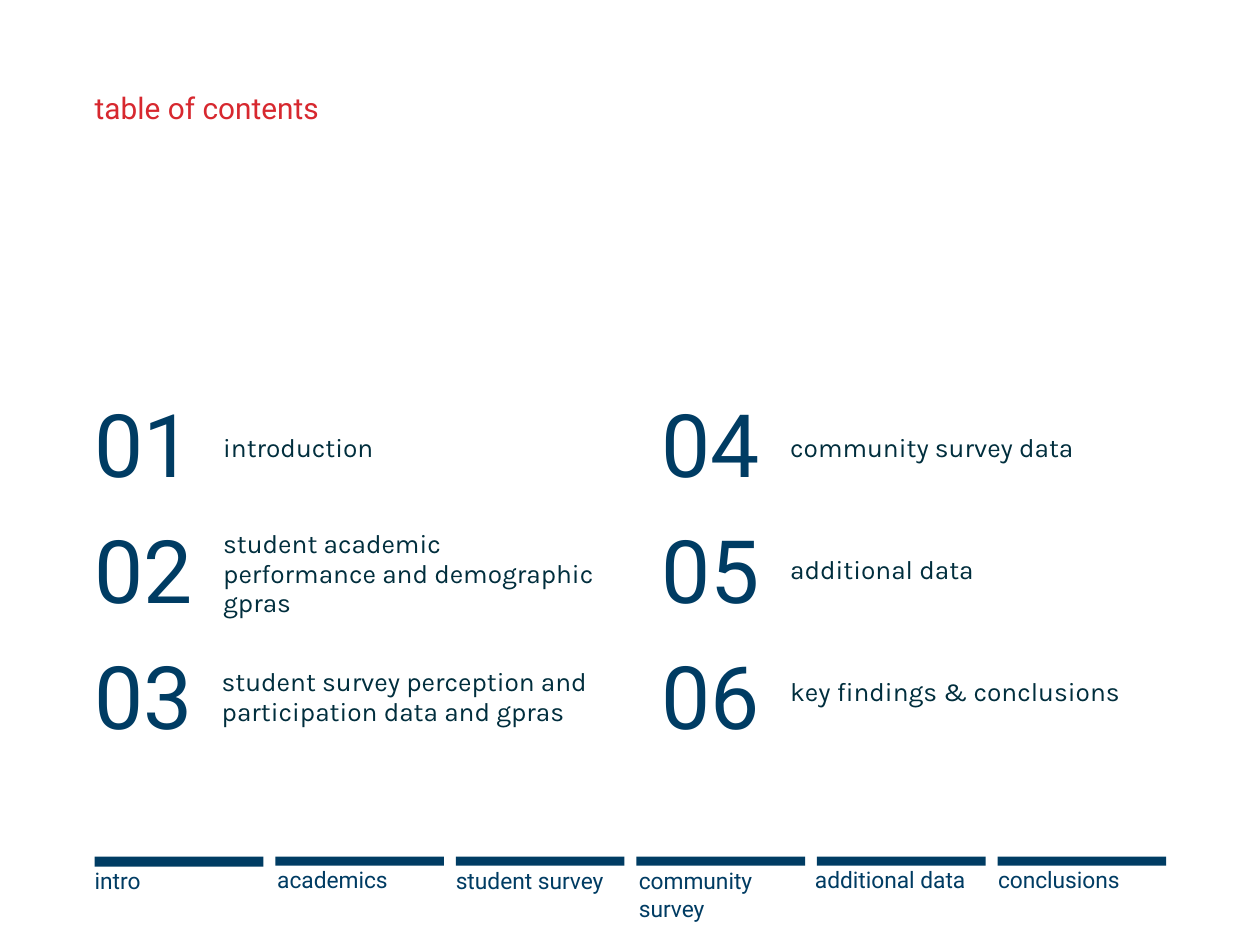
from dataclasses import dataclass

import pptx
import pptx.dml.color
import pptx.enum.shapes
import pptx.enum.text
import pptx.util

Cm = pptx.util.Cm
Pt = pptx.util.Pt
ANCHOR = pptx.enum.text.MSO_ANCHOR

COLORS = {"navy": "003C63", "ink": "002E3D", "red": "D7282F"}

STYLES = {
    "title": {"name": "Roboto", "size": Pt(17), "color": "red", "spacing": 0.85},
    "number": {"name": "Roboto", "size": Pt(50), "color": "navy", "spacing": 0.85},
    "entry": {"name": "Karla", "size": Pt(15), "color": "ink", "spacing": Pt(17)},
    "tab": {"name": "Roboto", "size": Pt(13), "color": "navy", "spacing": 1.0},
}

MARGIN = 1.91
ROWS = 3
ROW_STEP = 2.54
COLUMN_STEP = 11.43
NUMBER_TOP = 8.18
TAB_STEP = 3.64
TAB_WIDTH = 3.4
BAR_TOP = 17.27


@dataclass
class Entry:
    text: str
    left: float
    top: float
    width: float = 7.57


@dataclass
class Tab:
    text: str
    left: float
    top: float
    bar_height: float = 0.18


ENTRIES = [
    Entry("introduction", 4.5, 7.75),
    Entry("student academic performance and demographic gpras", 4.5, 10.29),
    Entry("student survey perception and participation data and gpras", 4.47, 12.78),
    Entry("community survey data", 15.93, 7.75, 7.98),
    Entry("additional data", 15.93, 10.21),
    Entry("key findings & conclusions", 15.93, 12.67),
]

TABS = [
    Tab("intro", 1.91, 17.48, 0.2),
    Tab("academics", 5.59, 17.45),
    Tab("student survey", 9.19, 17.48),
    Tab("community survey", 12.88, 17.48),
    Tab("additional data", 16.43, 17.45),
    Tab("conclusions", 20.12, 17.45),
]


def rgb(name: str) -> pptx.dml.color.RGBColor:
    return pptx.dml.color.RGBColor.from_string(COLORS[name])


def add_text(s, text: str, style: str, left: float, top: float,
             width: float, height: float, anchor=ANCHOR.TOP) -> None:
    fmt = STYLES[style]
    sp = s.shapes.add_textbox(Cm(left), Cm(top), Cm(width), Cm(height))
    tf = sp.text_frame
    frame = {"word_wrap": True, "vertical_anchor": anchor, "margin_left": 0,
             "margin_right": 0, "margin_top": 0, "margin_bottom": 0}
    for key, value in frame.items():
        setattr(tf, key, value)
    p = tf.paragraphs[0]
    p.line_spacing = fmt["spacing"]
    r = p.add_run()
    r.text = text
    for key in ("name", "size"):
        setattr(r.font, key, fmt[key])
    r.font.color.rgb = rgb(fmt["color"])


def add_entry(s, index: int, entry: Entry) -> None:
    column, row = divmod(index, ROWS)
    add_text(s, f"{index + 1:02d}", "number", MARGIN + column * COLUMN_STEP,
             NUMBER_TOP + row * ROW_STEP, 2.59, 2.62)
    add_text(s, entry.text, "entry", entry.left, entry.top, entry.width, 2.54,
             ANCHOR.MIDDLE)


def add_tab(s, index: int, tab: Tab) -> None:
    sp = s.shapes.add_shape(
        pptx.enum.shapes.MSO_SHAPE.RECTANGLE, Cm(MARGIN + index * TAB_STEP),
        Cm(BAR_TOP), Cm(TAB_WIDTH), Cm(tab.bar_height))
    sp.shadow.inherit = False
    sp.fill.solid()
    sp.fill.fore_color.rgb = rgb("navy")
    sp.line.fill.background()
    add_text(s, tab.text, "tab", tab.left, tab.top, TAB_WIDTH, 0.56)


def main() -> None:
    prs = pptx.Presentation()
    prs.slide_width, prs.slide_height = Cm(25.4), Cm(19.05)
    s = prs.slides.add_slide(prs.slide_layouts[6])
    add_text(s, "table of contents", "title", MARGIN, 1.93, 21.59, 1.24)
    for index, entry in enumerate(ENTRIES):
        add_entry(s, index, entry)
    for index, tab in enumerate(TABS):
        add_tab(s, index, tab)
    prs.save("out.pptx")


if __name__ == "__main__":
    main()
